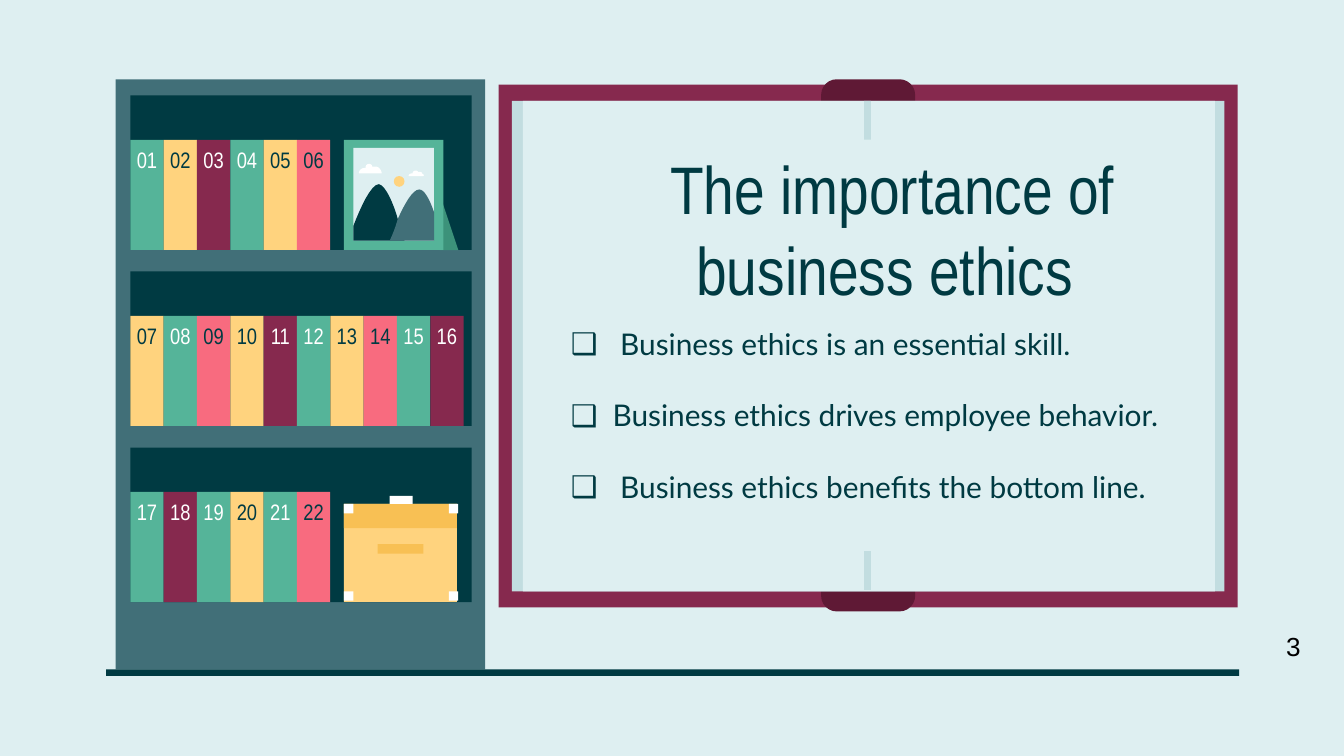
from lxml import etree
from pptx import Presentation
from pptx.dml.color import RGBColor
from pptx.enum.shapes import MSO_SHAPE
from pptx.enum.text import MSO_ANCHOR, PP_ALIGN
from pptx.oxml.ns import qn
from pptx.util import Inches, Pt

RECT, ROUND, OVAL = MSO_SHAPE.RECTANGLE, MSO_SHAPE.ROUNDED_RECTANGLE, MSO_SHAPE.OVAL
TOP, LEFT, CENTER = MSO_ANCHOR.TOP, PP_ALIGN.LEFT, PP_ALIGN.CENTER

PALE, INK, SLATE, MIST = "DEEFF1", "003A42", "416F78", "C2DDE0"
GREEN, GOLD, WINE, PINK = "55B499", "FFD37E", "86294E", "F86B7F"
AMBER, FERN, PLUM, WHITE, BLACK = "F8C054", "3C927A", "5F1935", "FFFFFF", "000000"
NARROW, BODY, PLAIN = "Arial Narrow", "Lato", "Arial"

TITLE = "The importance of business ethics "
POINTS = [
    " Business ethics is an essential skill.",
    "Business ethics drives employee behavior.",
    " Business ethics benefits the bottom line.",
]
PAGE = "3"
SHELVES = [
    [GREEN, GOLD, WINE, GREEN, GOLD, PINK],
    [GOLD, GREEN, PINK, GOLD, WINE, GREEN, GOLD, PINK, GREEN, WINE],
    [GREEN, WINE, GREEN, GOLD, GREEN, PINK],
]
BOARD = [
    (3.71, 0.63, 5.5, 3.89, WINE, RECT),
    (6.11, 0.59, 0.7, 3.96, PLUM, ROUND),
    (3.81, 0.75, 5.3, 3.65, MIST, RECT),
    (3.89, 0.75, 5.15, 3.65, PALE, RECT),
    (6.43, 0.75, 0.05, 0.29, MIST, RECT),
    (6.43, 4.1, 0.05, 0.29, MIST, RECT),
]
CASE = [
    (2.56, 3.75, 0.84, 0.73, GOLD),
    (2.56, 3.75, 0.84, 0.18, AMBER),
    (2.81, 4.05, 0.34, 0.07, AMBER),
    (2.9, 3.69, 0.17, 0.06, WHITE),
]
CORNERS = [(x, y, 0.07, 0.07, WHITE) for y in (3.75, 4.4) for x in (2.56, 3.34)]
STAND = (FERN, [(3.27, 1.44), (3.27, 1.86), (3.41, 1.86)])
HILLS = [
    (INK, [(2.82, 1.37), (2.76, 1.37, 2.68, 1.55, 2.63, 1.68), (2.63, 1.79),
           (3.01, 1.79), (3, 1.76, 2.98, 1.7, 2.96, 1.63),
           (2.93, 1.52, 2.87, 1.38, 2.82, 1.37)]),
    (SLATE, [(3.12, 1.41), (3.07, 1.41, 3.01, 1.52, 2.96, 1.63),
             (2.94, 1.7, 2.92, 1.75, 2.9, 1.79), (3.23, 1.79), (3.23, 1.58),
             (3.2, 1.49, 3.16, 1.41, 3.12, 1.41)]),
]
CLOUDS = [
    (WHITE, [(2.75, 1.22), (2.73, 1.22, 2.72, 1.23, 2.72, 1.25), (2.71, 1.25),
             (2.69, 1.25, 2.67, 1.27, 2.67, 1.29), (2.84, 1.29),
             (2.84, 1.27, 2.83, 1.26, 2.82, 1.25),
             (2.81, 1.24, 2.8, 1.24, 2.79, 1.24), (2.77, 1.24),
             (2.77, 1.23, 2.76, 1.22, 2.75, 1.22)]),
    (WHITE, [(3.09, 1.27), (3.08, 1.27, 3.07, 1.28, 3.07, 1.29),
             (3.05, 1.29, 3.04, 1.3, 3.04, 1.31), (3.15, 1.31),
             (3.16, 1.3, 3.15, 1.3, 3.14, 1.29),
             (3.14, 1.28, 3.13, 1.28, 3.12, 1.28), (3.11, 1.28),
             (3.11, 1.27, 3.1, 1.27, 3.09, 1.27)]),
]


def color(code):
    return RGBColor.from_string(code)


def paint(shape, fill):
    shape.fill.solid()
    shape.fill.fore_color.rgb = color(fill)
    shape.line.fill.background()
    shape.shadow.inherit = False
    return shape


def block(home, x, y, w, h, fill, kind=RECT):
    box = [Inches(v) for v in (x, y, w, h)]
    return paint(home.shapes.add_shape(kind, *box), fill)


def outline(home, fill, steps):
    dots = [steps[0]]
    for step in steps[1:]:
        if len(step) == 2:
            dots.append(step)
            continue
        ends = [dots[-1], step[:2], step[2:4], step[4:]]
        for i in range(1, 9):
            t = i / 8
            parts = ((1 - t) ** 3, 3 * t * (1 - t) ** 2, 3 * t * t * (1 - t), t ** 3)
            dots.append(tuple(sum(k * p[a] for k, p in zip(parts, ends)) for a in (0, 1)))
    dots = [(Inches(x), Inches(y)) for x, y in dots]
    pen = home.shapes.build_freeform(*dots[0])
    pen.add_line_segments(dots[1:], close=True)
    return paint(pen.convert_to_shape(), fill)


def write(shape, lines, size, font, tint, align, inset, wrap=True):
    frame = shape.text_frame
    frame.word_wrap = wrap
    frame.vertical_anchor = TOP
    (frame.margin_left, frame.margin_top,
     frame.margin_right, frame.margin_bottom) = [Inches(v) for v in inset]
    for i, line in enumerate(lines):
        para = frame.add_paragraph() if i else frame.paragraphs[0]
        para.alignment = align
        run = para.add_run()
        run.text = line
        run.font.size = Pt(size)
        run.font.name = font
        run.font.color.rgb = color(tint)
    return frame


def area(x, y, w, h):
    return slide.shapes.add_textbox(*[Inches(v) for v in (x, y, w, h)])


def bullet(para):
    props = para._p.get_or_add_pPr()
    props.set("marL", str(Inches(0.31)))
    props.set("indent", str(-Inches(0.31)))
    tint = etree.SubElement(props, qn("a:buClr"))
    etree.SubElement(tint, qn("a:srgbClr")).set("val", INK)
    etree.SubElement(props, qn("a:buFont")).set("typeface", BODY)
    etree.SubElement(props, qn("a:buChar")).set("char", "❑")


deck = Presentation()
deck.slide_width, deck.slide_height = Inches(10), Inches(10 * 9 / 16)
slide = deck.slides.add_slide(deck.slide_layouts[6])
slide.background.fill.solid()
slide.background.fill.fore_color.rgb = color(PALE)

board = slide.shapes.add_group_shape()
for part in BOARD:
    block(board, *part)

write(area(4.09, 1, 5.1, 0.67), [TITLE], 36, NARROW, INK, CENTER, (0.1,) * 4)
points = write(area(4.15, 2.05, 4.75, 2.39), POINTS, 16, BODY, INK, LEFT,
               (0.1, 0.37, 0.1, 0.1))
for para in points.paragraphs:
    para.space_after = Pt(19.2)
    bullet(para)

block(slide, 0.86, 0.59, 2.75, 4.39, SLATE)
number = 0
for row, books in enumerate(SHELVES):
    top = 0.71 + 1.31 * row
    block(slide, 0.97, top, 2.54, 1.15, INK)
    for col, fill in enumerate(books):
        number += 1
        book = block(slide, 0.97 + 2.48 / 10 * col, top + 0.33, 2.48 / 10, 0.82, fill)
        tint = WHITE if fill in (GREEN, WINE) else INK
        write(book, [f"{number:02d}"], 12, NARROW, tint, CENTER, (0, 0.05, 0, 0.05))

photo = slide.shapes.add_group_shape()
outline(photo, *STAND)
block(photo, 2.56, 1.04, 0.74, 0.82, GREEN)
block(photo, 2.63, 1.1, 0.6, 0.69, PALE)
for hill in HILLS:
    outline(photo, *hill)
block(photo, 2.93, 1.31, 0.08, 0.08, GOLD, OVAL)
for cloud in CLOUDS:
    outline(photo, *cloud)

case = slide.shapes.add_group_shape()
for part in CASE + CORNERS:
    block(case, *part)

block(slide, 0.79, 4.98, 8.43, 0.05, INK)
write(area(9.47, 4.64, 0.31, 0.34), [PAGE], 14, PLAIN, BLACK, LEFT,
      (0.1, 0.05, 0.1, 0.05), False)

deck.save("out.pptx")
